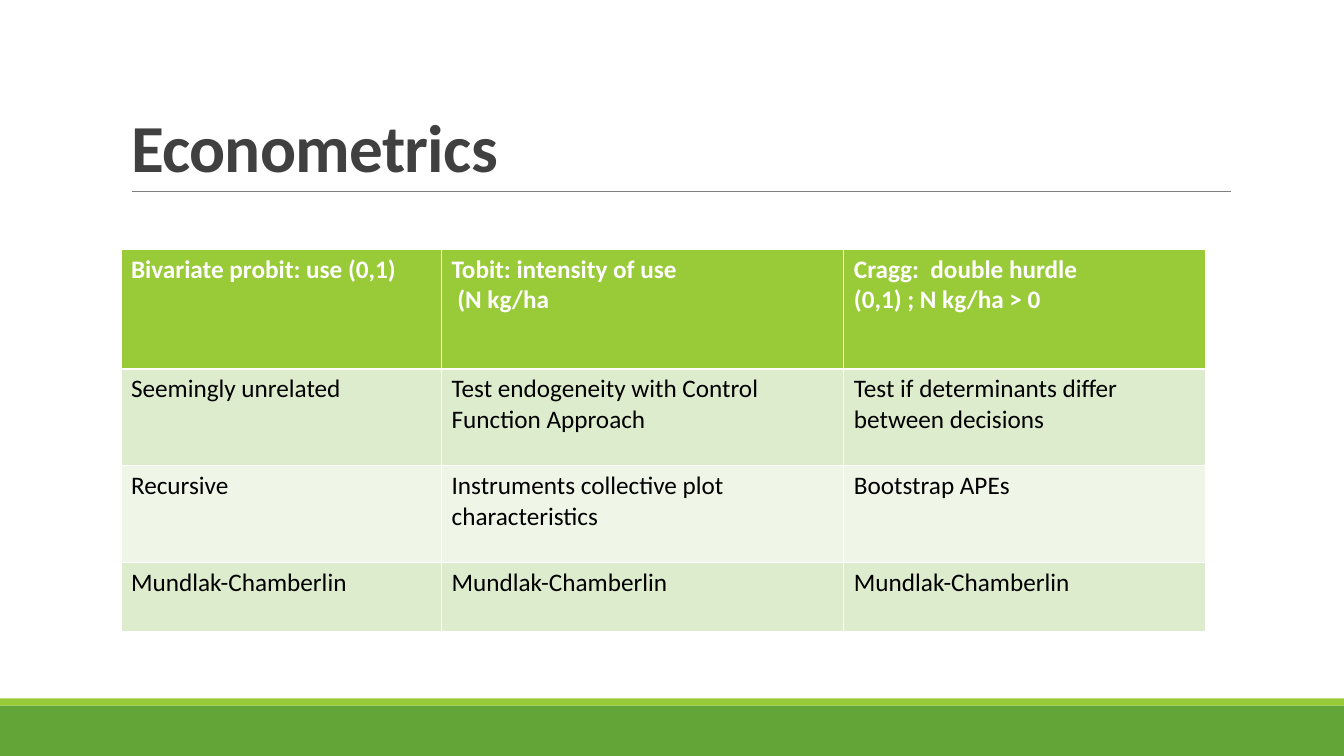
"""Build the Econometrics slide with its table of three model approaches."""
import dataclasses

import pptx
import pptx.dml.color
import pptx.enum.shapes
import pptx.enum.text
import pptx.oxml
import pptx.oxml.ns
import pptx.util

Inches = pptx.util.Inches
COLORS = {
    "band": "63A537", "accent": "99CB38", "rule": "808080", "title": "404040",
    "white": "FFFFFF", "black": "000000", "odd": "DEECCE", "even": "EFF6E8",
}
COLUMN_WIDTHS = [3.18, 3.99, 3.59]


@dataclasses.dataclass
class Bar:
    """Full-width footer bar."""
    top: float
    height: float
    color: str


@dataclasses.dataclass
class Row:
    """Table row with its height, colours and cell texts."""
    height: float
    fill: str
    cells: list[str]
    color: str = "black"
    bold: bool = False


BARS = [Bar(7, 0.5, "band"), Bar(6.93, 0.07, "accent")]
ROWS = [
    Row(1.19, "accent", ["Bivariate probit: use (0,1)",
                         "Tobit: intensity of use\n (N kg/ha",
                         "Cragg:  double hurdle\n(0,1) ; N kg/ha > 0"], "white", True),
    Row(0.96, "odd", ["Seemingly unrelated",
                      "Test endogeneity with Control Function Approach",
                      "Test if determinants differ between decisions"]),
    Row(0.96, "even", ["Recursive",
                       "Instruments collective plot characteristics",
                       "Bootstrap APEs"]),
    Row(0.69, "odd", ["Mundlak-Chamberlin"] * 3),
]


def rgb(name: str) -> pptx.dml.color.RGBColor:
    """Return the named colour."""
    return pptx.dml.color.RGBColor.from_string(COLORS[name])


def write(tf, text: str, *, size: float, color: str, bold: bool = False,
          line_spacing: float | None = None, spacing: int | None = None) -> None:
    """Fill a text frame, one paragraph for each line, and format it."""
    tf.text = text
    for p in tf.paragraphs:
        p.alignment = pptx.enum.text.PP_ALIGN.LEFT
        p.line_spacing = line_spacing
        for r in p.runs:
            r.font.name = "Calibri"
            r.font.size = pptx.util.Pt(size)
            r.font.bold = bold
            r.font.color.rgb = rgb(color)
            if spacing is not None:
                r.font._element.set("spc", str(spacing))


def add_bar(s, bar: Bar) -> None:
    """Draw a footer bar across the slide."""
    sp = s.shapes.add_shape(pptx.enum.shapes.MSO_SHAPE.RECTANGLE, 0, Inches(bar.top),
                            Inches(13.33), Inches(bar.height))
    sp.shadow.inherit = False
    sp.fill.solid()
    sp.fill.fore_color.rgb = rgb(bar.color)
    sp.line.fill.background()


def add_rule(s) -> None:
    """Draw the thin line under the title."""
    line = s.shapes.add_connector(pptx.enum.shapes.MSO_CONNECTOR.STRAIGHT, Inches(1.31),
                                  Inches(1.9), Inches(12.21), Inches(1.9))
    line.line.color.rgb = rgb("rule")
    line.line.width = pptx.util.Pt(0.5)
    line._element.spPr.append(pptx.oxml.parse_xml(
        f"<a:effectLst {pptx.oxml.ns.nsdecls('a')}/>"))


def add_title(s, text: str) -> None:
    """Place and fill the title placeholder."""
    sp = s.shapes.title
    sp.left, sp.top, sp.width, sp.height = map(Inches, (1.2, 0.31, 11, 1.59))
    tf = sp.text_frame
    tf.auto_size = pptx.enum.text.MSO_AUTO_SIZE.NONE
    tf.vertical_anchor = pptx.enum.text.MSO_ANCHOR.BOTTOM
    write(tf, text, size=48, color="title", bold=True, line_spacing=0.85, spacing=-50)


def add_models(s) -> None:
    """Draw the table of models."""
    table = s.shapes.add_table(
        len(ROWS), len(COLUMN_WIDTHS), Inches(1.2), Inches(2.47),
        Inches(sum(COLUMN_WIDTHS)), Inches(sum(row.height for row in ROWS))).table
    for column, width in zip(table.columns, COLUMN_WIDTHS):
        column.width = Inches(width)
    for i, row in enumerate(ROWS):
        table.rows[i].height = Inches(row.height)
        for cell, text in zip(table.rows[i].cells, row.cells):
            cell.fill.solid()
            cell.fill.fore_color.rgb = rgb(row.fill)
            write(cell.text_frame, text, size=18, color=row.color, bold=row.bold)


def main() -> None:
    """Build and save the slide."""
    prs = pptx.Presentation()
    prs.slide_width, prs.slide_height = Inches(13.33), Inches(7.5)
    s = prs.slides.add_slide(prs.slide_layouts[5])
    for bar in BARS:
        add_bar(s, bar)
    add_rule(s)
    add_title(s, "Econometrics")
    add_models(s)
    prs.save("out.pptx")


if __name__ == "__main__":
    main()
